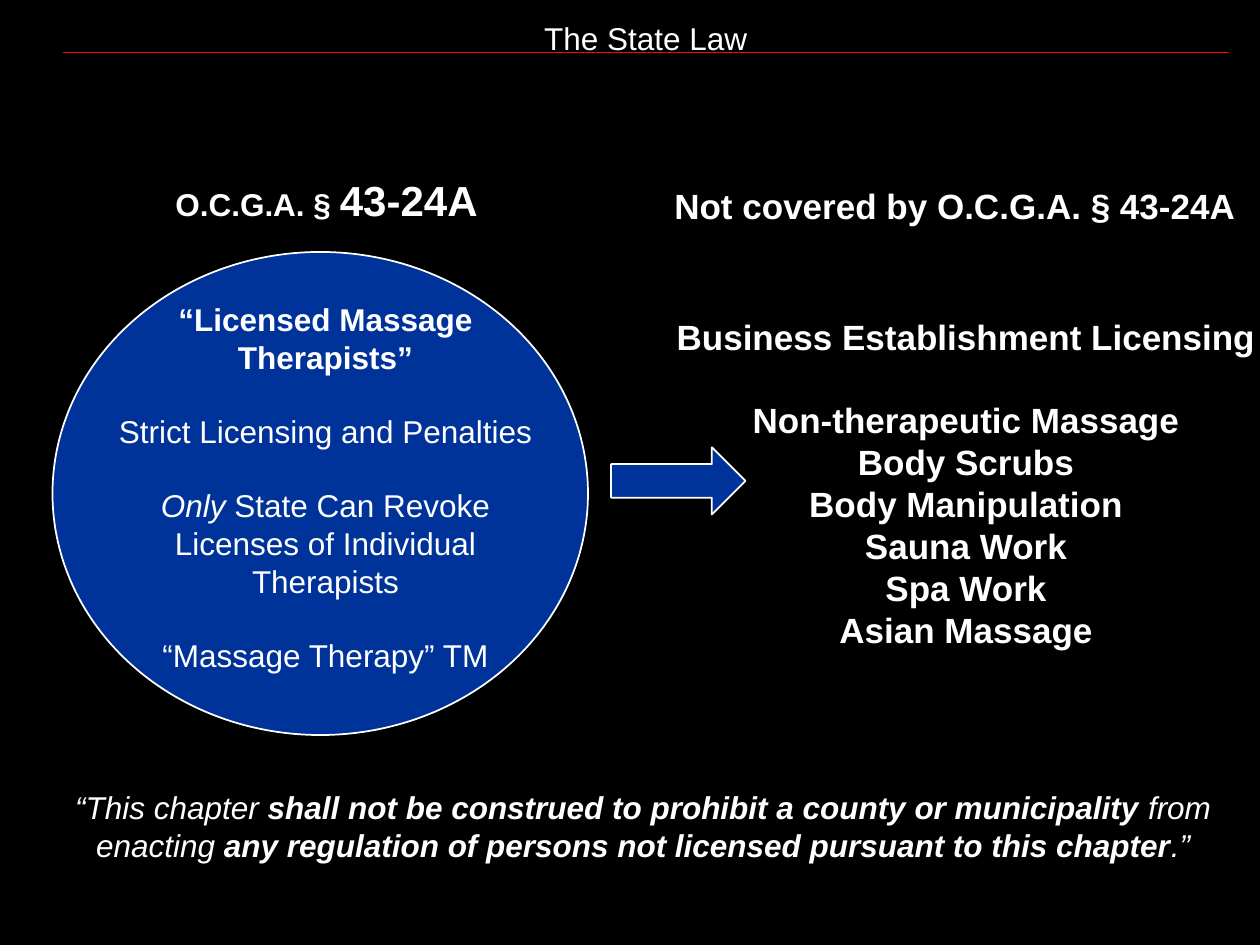
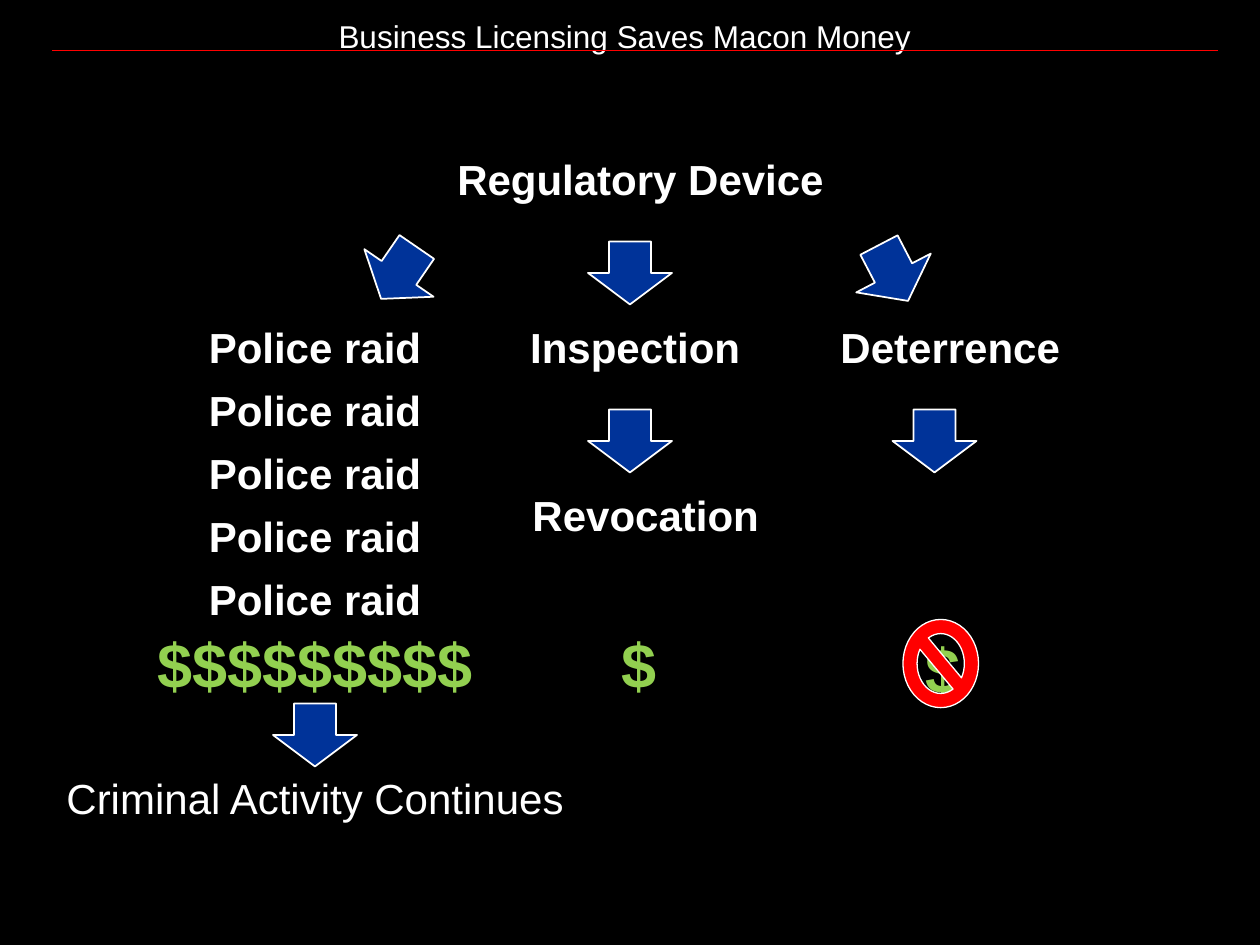
from dataclasses import dataclass

from lxml.etree import SubElement
from pptx import Presentation
from pptx.dml.color import RGBColor
from pptx.enum.shapes import MSO_CONNECTOR, MSO_SHAPE
from pptx.enum.text import MSO_ANCHOR, MSO_AUTO_SIZE, PP_ALIGN
from pptx.oxml.ns import qn
from pptx.presentation import Presentation as Deck
from pptx.slide import Slide
from pptx.util import Emu, Pt

EMU_PER_PX = 7620
FONT = "Arial"
BLACK, WHITE, RED, BLUE, GREEN = "000000", "FFFFFF", "FF0000", "003399", "92D050"
LINE_HEIGHT = 1.15
COLUMN_WIDTH, LABEL_WIDTH, ROW_HEIGHT = 560, 290, 60
DOLLAR_WIDTH, DOLLAR_HEIGHT = 50, 85


@dataclass(frozen=True)
class Box:
    """A place on the slide, in px."""
    left: int
    top: int
    width: int
    height: int


@dataclass(frozen=True)
class Run:
    """Words with a format that differs from the rest of their text."""
    text: str
    bold: bool = False
    italic: bool = False
    size: int | None = None


@dataclass(frozen=True)
class Line:
    """A paragraph, optionally set off by one empty line's height."""
    runs: tuple[Run, ...]
    gap: bool = False


@dataclass(frozen=True)
class Label:
    """A one-line text and its place."""
    text: str
    box: Box
    size: int = 24
    color: str = WHITE
    bold: bool = True


@dataclass(frozen=True)
class DownArrow:
    """The place and turn of a downward block arrow."""
    left: int
    top: int
    rotation: float = 0


def px(value: int) -> Emu:
    """Turn px into EMU."""
    return Emu(value * EMU_PER_PX)


def rgb(color: str) -> RGBColor:
    """Turn a hex string into a colour."""
    return RGBColor.from_string(color)


def place(box: Box) -> tuple[Emu, Emu, Emu, Emu]:
    """Give a box as four lengths."""
    return px(box.left), px(box.top), px(box.width), px(box.height)


def add_text(slide: Slide, box: Box, content: str | list[Line], *, size: int = 18,
             color: str = WHITE, bold: bool = False, wrap: bool = True,
             anchor: MSO_ANCHOR = MSO_ANCHOR.TOP) -> None:
    """Add a centred text box."""
    lines = [Line((Run(content, bold),))] if isinstance(content, str) else content
    frame = slide.shapes.add_textbox(*place(box)).text_frame
    frame.word_wrap = wrap
    frame.auto_size = MSO_AUTO_SIZE.SHAPE_TO_FIT_TEXT
    frame.vertical_anchor = anchor
    for index, line in enumerate(lines):
        paragraph = frame.add_paragraph() if index else frame.paragraphs[0]
        paragraph.alignment = PP_ALIGN.CENTER
        paragraph.space_before = Pt(size * LINE_HEIGHT if line.gap else 0)
        for part in line.runs:
            run = paragraph.add_run()
            run.text = part.text
            run.font.name = FONT
            run.font.size = Pt(part.size or size)
            run.font.bold = part.bold
            run.font.italic = part.italic
            run.font.color.rgb = rgb(color)


def add_figure(slide: Slide, kind: MSO_SHAPE, box: Box, *, fill: str = BLUE,
               line_width: float = 1, rotation: float = 0) -> None:
    """Add a filled preset shape with a white outline."""
    shape = slide.shapes.add_shape(kind, *place(box))
    shape.shadow.inherit = False
    shape.fill.solid()
    shape.fill.fore_color.rgb = rgb(fill)
    shape.line.color.rgb = rgb(WHITE)
    shape.line.width = Pt(line_width)
    shape.rotation = rotation


def add_titled_slide(presentation: Deck, title: str, title_box: Box,
                     rule_left: int, rule_top: int) -> Slide:
    """Add a black slide with a title and a red rule."""
    slide = presentation.slides.add_slide(presentation.slide_layouts[6])
    slide.background.fill.solid()
    slide.background.fill.fore_color.rgb = rgb(BLACK)
    add_text(slide, title_box, title)
    rule = slide.shapes.add_connector(
        MSO_CONNECTOR.STRAIGHT, px(rule_left), px(rule_top),
        px(rule_left + title_box.width), px(rule_top))
    rule.line.color.rgb = rgb(RED)
    rule.line.width = Pt(0.75)
    SubElement(rule._element.spPr, qn("a:effectLst"))
    return slide


def build_state_law(presentation: Deck) -> None:
    """Build the slide on what the state law covers."""
    slide = add_titled_slide(presentation, "The State Law", Box(60, 12, 1110, 48), 60, 50)
    add_figure(slide, MSO_SHAPE.OVAL, Box(50, 240, 510, 460))
    add_text(slide, Box(90, 280, 440, 376), [
        Line((Run("“Licensed Massage Therapists”", bold=True),)),
        Line((Run("Strict Licensing and Penalties"),), gap=True),
        Line((Run("Only", italic=True),
              Run(" State Can Revoke Licenses of Individual Therapists")), gap=True),
        Line((Run("“Massage Therapy” TM"),), gap=True),
    ])
    add_text(slide, Box(154, 160, 314, 61), [
        Line((Run("O.C.G.A. § ", bold=True), Run("43-24A", bold=True, size=24))),
    ], wrap=False)
    add_figure(slide, MSO_SHAPE.RIGHT_ARROW, Box(582, 426, 128, 64))
    add_text(slide, Box(630, 170, 559, 53), "Not covered by O.C.G.A. § 43-24A",
             size=20, bold=True, wrap=False)
    uncovered = ["Business Establishment Licensing", "Non-therapeutic Massage",
                 "Body Scrubs", "Body Manipulation", "Sauna Work", "Spa Work",
                 "Asian Massage"]
    add_text(slide, Box(630, 295, 580, 335),
             [Line((Run(name, bold=True),), gap=index == 1)
              for index, name in enumerate(uncovered)],
             size=20, wrap=False)
    quote = ["“This chapter ",
             "shall not be construed to prohibit a county or municipality ",
             "from enacting ",
             "any regulation of persons not licensed pursuant to this chapter",
             ".”"]
    add_text(slide, Box(34, 734, 1157, 106),
             [Line(tuple(Run(text, bold=index % 2 == 1, italic=True)
                         for index, text in enumerate(quote)))],
             anchor=MSO_ANCHOR.MIDDLE)


def build_business_licensing(presentation: Deck) -> None:
    """Build the slide that compares the costs of regulatory devices."""
    slide = add_titled_slide(presentation, "Business Licensing Saves Macon Money",
                             Box(40, 10, 1110, 48), 50, 48)
    raids = [Label("Police raid", Box(20, 300 + ROW_HEIGHT * row, COLUMN_WIDTH, ROW_HEIGHT))
             for row in range(5)]
    costs = [Label(text, Box(left, top, width, DOLLAR_HEIGHT), size=36, color=GREEN)
             for text, left, top, width in (("$" * 9, 20, 590, COLUMN_WIDTH),
                                            ("$", 580, 590, DOLLAR_WIDTH),
                                            ("$", 870, 595, DOLLAR_WIDTH))]
    labels = [
        Label("Regulatory Device", Box(330, 140, COLUMN_WIDTH, ROW_HEIGHT)),
        *raids,
        Label("Inspection", Box(460, 300, LABEL_WIDTH, ROW_HEIGHT)),
        Label("Revocation", Box(470, 460, LABEL_WIDTH, ROW_HEIGHT)),
        Label("Deterrence", Box(760, 300, LABEL_WIDTH, ROW_HEIGHT)),
        *costs,
        Label("Criminal Activity Continues", Box(20, 730, COLUMN_WIDTH, ROW_HEIGHT),
              bold=False),
    ]
    for label in labels:
        add_text(slide, label.box, label.text, size=label.size, color=label.color,
                 bold=label.bold)
    arrows = [DownArrow(340, 230, 34.5), DownArrow(560, 230), DownArrow(811, 230, 332.5),
              DownArrow(560, 390), DownArrow(850, 390), DownArrow(260, 670)]
    for arrow in arrows:
        add_figure(slide, MSO_SHAPE.DOWN_ARROW, Box(arrow.left, arrow.top, 80, 60),
                   rotation=arrow.rotation)
    add_figure(slide, MSO_SHAPE.NO_SYMBOL, Box(860, 590, 72, 84), fill=RED, line_width=0.75)


def main() -> None:
    """Build and save the presentation."""
    presentation = Presentation()
    presentation.slide_width, presentation.slide_height = px(1200), px(900)
    build_state_law(presentation)
    build_business_licensing(presentation)
    presentation.save("out.pptx")


if __name__ == "__main__":
    main()
